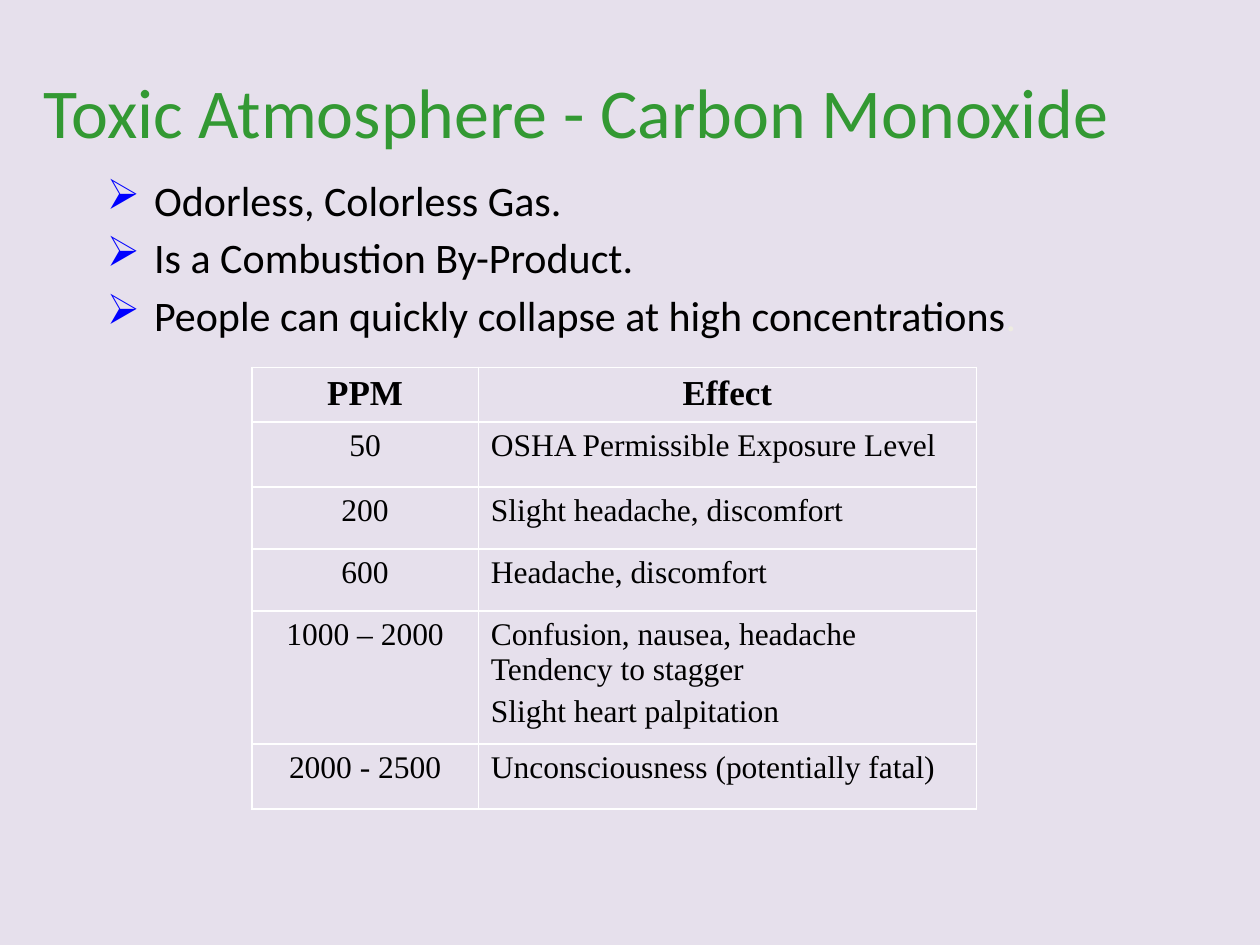
from dataclasses import dataclass

from lxml import etree
from pptx import Presentation
from pptx.dml.color import RGBColor
from pptx.enum.text import MSO_ANCHOR, PP_ALIGN
from pptx.oxml.ns import qn
from pptx.util import Pt

LEFT, CENTER = PP_ALIGN.LEFT, PP_ALIGN.CENTER
TOP, MIDDLE = MSO_ANCHOR.TOP, MSO_ANCHOR.MIDDLE


@dataclass(frozen=True)
class Theme:
    back: str = "E6E0EC"
    title: str = "339933"
    text: str = "000000"
    faint: str = "EEECE1"
    mark: str = "0000FF"
    rule: str = "FFFFFF"
    sans: str = "Calibri"
    serif: str = "Times New Roman"
    title_size: int = 40
    point_size: int = 24
    head_size: int = 20
    cell_size: int = 18
    gap: int = 4
    hang: int = 27


THEME = Theme()

POINTS = [
    [("Odorless, Colorless Gas.", THEME.text)],
    [("Is a Combustion By-Product.", THEME.text)],
    [("People can quickly collapse at high concentrations", THEME.text),
     (".", THEME.faint)],
]
HEADS = ("PPM", "Effect")
EFFECTS = [
    ("50", "OSHA Permissible Exposure Level"),
    ("200", "Slight headache, discomfort"),
    ("600", "Headache, discomfort"),
    ("1000 – 2000", "Confusion, nausea, headache Tendency to stagger\n"
                    "Slight heart palpitation"),
    ("2000 - 2500", "Unconsciousness (potentially fatal)"),
]
COLS = (129.3, 284.7)
ROWS = (29.7, 37, 35.5, 35.5, 70.5, 37)


def add_run(para, text, font, size, color, bold=False):
    run = para.add_run()
    run.text = text
    run.font.name = font
    run.font.size = Pt(size)
    run.font.bold = bold
    run.font.color.rgb = RGBColor.from_string(color)


def add_para(frame, first):
    """Use the frame's own paragraph first, then append new ones."""
    para = frame.paragraphs[0] if first else frame.add_paragraph()
    para.space_before = Pt(THEME.gap)
    return para


def add_box(slide, left, top, width, height, anchor):
    box = slide.shapes.add_textbox(Pt(left), Pt(top), Pt(width), Pt(height))
    frame = box.text_frame
    frame.word_wrap = True
    frame.vertical_anchor = anchor
    return frame


def set_bullet(para):
    props = para._p.get_or_add_pPr()
    props.set("marL", str(Pt(THEME.hang)))
    props.set("indent", str(-Pt(THEME.hang)))
    color = etree.SubElement(props, qn("a:buClr"))
    etree.SubElement(color, qn("a:srgbClr"), val=THEME.mark)
    etree.SubElement(props, qn("a:buChar"), char="➢")


def set_border(cell):
    props = cell._tc.get_or_add_tcPr()
    for side in ("lnL", "lnR", "lnT", "lnB"):
        line = etree.SubElement(props, qn(f"a:{side}"), w=str(Pt(1)))
        fill = etree.SubElement(line, qn("a:solidFill"))
        etree.SubElement(fill, qn("a:srgbClr"), val=THEME.rule)


def add_title(slide, text):
    frame = add_box(slide, 18, 18, 702, 90, MIDDLE)
    add_run(frame.paragraphs[0], text, THEME.sans, THEME.title_size,
            THEME.title)


def add_points(slide, points):
    frame = add_box(slide, 54, 96, 612, 384, TOP)
    for i, parts in enumerate(points):
        para = add_para(frame, i == 0)
        set_bullet(para)
        for text, color in parts:
            add_run(para, text, THEME.sans, THEME.point_size, color)


def fill_cell(cell, text, align, size, bold):
    set_border(cell)
    cell.fill.background()
    for i, line in enumerate(text.split("\n")):
        para = add_para(cell.text_frame, i == 0)
        para.alignment = align
        add_run(para, line, THEME.serif, size, THEME.text, bold)


def add_grid(slide, rows):
    frame = slide.shapes.add_table(len(ROWS), len(COLS), Pt(144), Pt(210),
                                   Pt(sum(COLS)), Pt(sum(ROWS)))
    table = frame.table
    table.first_row = table.horz_banding = False
    for col, width in zip(table.columns, COLS):
        col.width = Pt(width)
    for row, height in zip(table.rows, ROWS):
        row.height = Pt(height)
    for r, texts in enumerate(rows):
        head = r == 0
        size = THEME.head_size if head else THEME.cell_size
        for c, text in enumerate(texts):
            align = CENTER if head or c == 0 else LEFT
            fill_cell(table.cell(r, c), text, align, size, head)


def main():
    deck = Presentation()
    deck.slide_width, deck.slide_height = Pt(720), Pt(540)
    slide = deck.slides.add_slide(deck.slide_layouts[6])
    fill = slide.background.fill
    fill.solid()
    fill.fore_color.rgb = RGBColor.from_string(THEME.back)
    add_title(slide, "Toxic Atmosphere - Carbon Monoxide")
    add_points(slide, POINTS)
    add_grid(slide, [HEADS, *EFFECTS])
    deck.save("out.pptx")


if __name__ == "__main__":
    main()
